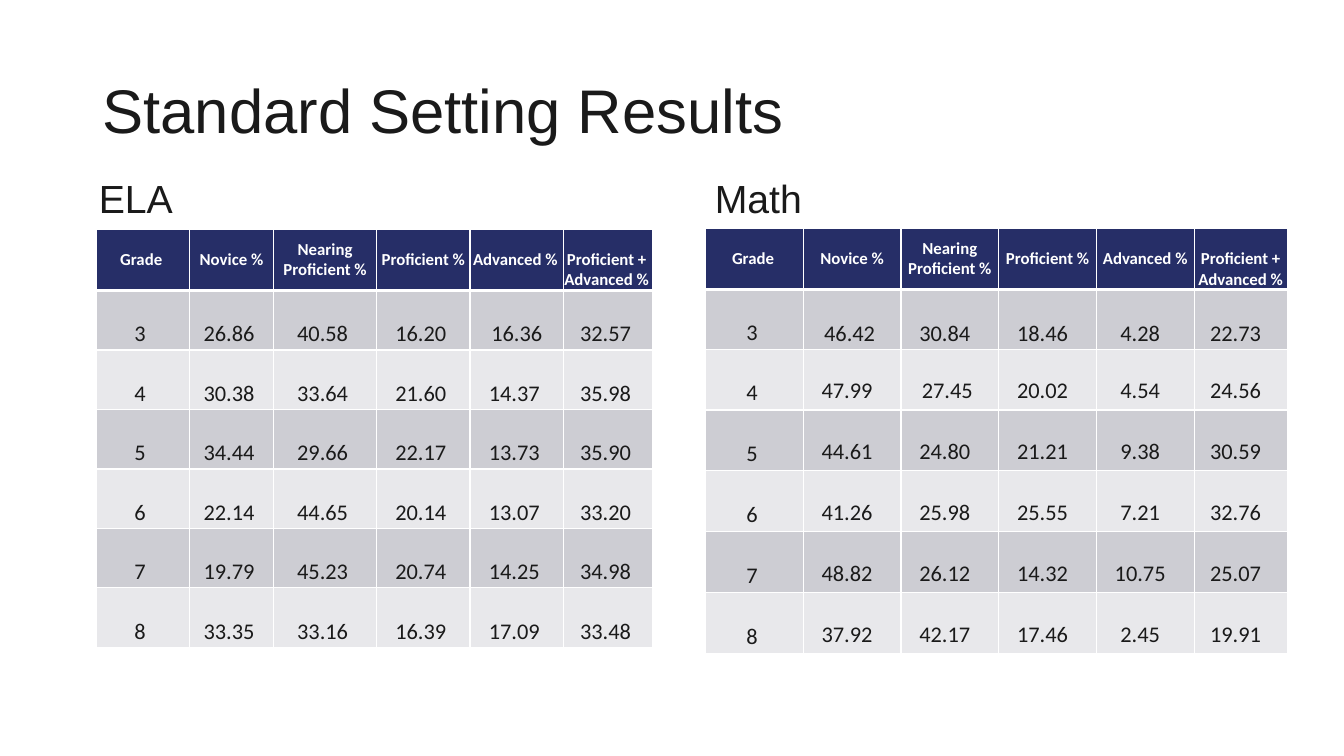
from dataclasses import dataclass, field

from lxml.etree import SubElement
from pptx import Presentation
from pptx.dml.color import RGBColor
from pptx.enum.text import MSO_ANCHOR, MSO_AUTO_SIZE, PP_ALIGN
from pptx.oxml.ns import qn
from pptx.util import Pt

INK = RGBColor(0x1A, 0x1A, 0x1A)
WHITE = RGBColor(0xFF, 0xFF, 0xFF)
NAVY = RGBColor(0x26, 0x2E, 0x67)
BANDS = (RGBColor(0xCD, 0xCD, 0xD3), RGBColor(0xE8, 0xE8, 0xEB))

TITLE_FONT = {"name": "Arial", "size": Pt(44), "bold": False}
SUBJECT_FONT = {"name": "Arial", "size": Pt(28), "bold": False}
HEADER_FONT = {"name": "Calibri", "size": Pt(12), "bold": True}
VALUE_FONT = {"name": "Calibri", "size": Pt(16), "bold": False}

HEADINGS = ("Grade", "Novice %", "Nearing Proficient %", "Proficient %",
            "Advanced %", "Proficient + Advanced %")
GRADE_INSET = 3.6  # right inset that moves centred text slightly left
HEADER_INSET = 2


@dataclass
class SubjectResults:
    subject: str
    subject_left: float
    left: float
    top: float
    columns: list[float]
    rows: list[float]
    results: list[str]
    value_inset: float
    value_bottoms: list[float]
    grade_bottoms: list[float]
    inset_headings: tuple[int, ...]
    special_insets: dict[str, float] = field(default_factory=dict)


ELA = SubjectResults(
    subject="ELA", subject_left=63.4, left=68.6, top=163.6,
    columns=[66.6, 60.4, 73.4, 66.8, 66.8, 63.6],
    rows=[43.9] + [42.5] * 6,
    results=["26.86 40.58 16.20 16.36 32.57",
             "30.38 33.64 21.60 14.37 35.98",
             "34.44 29.66 22.17 13.73 35.90",
             "22.14 44.65 20.14 13.07 33.20",
             "19.79 45.23 20.74 14.25 34.98",
             "33.35 33.16 16.39 17.09 33.48"],
    value_inset=3.6, value_bottoms=[1.7] * 6, grade_bottoms=[1.7] * 6,
    inset_headings=(0, 4, 5), special_insets={"16.36": 0})

MATH = SubjectResults(
    subject="Math", subject_left=503.4, left=504, top=163,
    columns=[69.8] * 5 + [66.5],
    rows=[43.9, 42.5] + [43.5] * 5,
    results=["46.42 30.84 18.46 4.28 22.73",
             "47.99 27.45 20.02 4.54 24.56",
             "44.61 24.80 21.21 9.38 30.59",
             "41.26 25.98 25.55 7.21 32.76",
             "48.82 26.12 14.32 10.75 25.07",
             "37.92 42.17 17.46 2.45 19.91"],
    value_inset=7.2, value_bottoms=[1.4] + [3.6] * 5,
    grade_bottoms=[1.7] + [2.2] * 5,
    inset_headings=(0,), special_insets={"46.42": 3.6, "27.45": 3.6})


def set_all(target, values: dict) -> None:
    for name, value in values.items():
        setattr(target, name, value)


def fill_placeholder(holder, box: tuple, text: str, font: dict, anchor) -> None:
    set_all(holder, dict(zip(("left", "top", "width", "height"), map(Pt, box))))
    set_all(holder.text_frame, {"text": text, "word_wrap": True,
                                "auto_size": MSO_AUTO_SIZE.NONE,
                                "vertical_anchor": anchor})
    paragraph = holder.text_frame.paragraphs[0]
    set_all(paragraph, {"alignment": PP_ALIGN.LEFT, "line_spacing": 0.9,
                        "space_before": Pt(0)})
    properties = paragraph._p.get_or_add_pPr()
    properties.set("marL", "0")
    properties.set("indent", "0")
    SubElement(properties, qn("a:buNone"))
    set_all(paragraph.runs[0].font, font)
    paragraph.runs[0].font.color.rgb = INK


def add_borders(cell, bottom_width: float) -> None:
    properties = cell._tc.get_or_add_tcPr()
    for side, width in (("L", 1), ("R", 1), ("T", 1), ("B", bottom_width)):
        line = SubElement(properties, qn(f"a:ln{side}"), w=str(Pt(width)))
        paint = SubElement(line, qn("a:solidFill"))
        SubElement(paint, qn("a:srgbClr"), val=str(WHITE))


def fill_cell(cell, text: str, font: dict, color: RGBColor, fill: RGBColor,
              anchor, right: float, bottom: float, border: float = 1) -> None:
    add_borders(cell, border)
    cell.fill.solid()
    cell.fill.fore_color.rgb = fill
    set_all(cell, {"text": text, "vertical_anchor": anchor,
                   "margin_left": 0, "margin_top": 0,
                   "margin_right": Pt(right), "margin_bottom": Pt(bottom)})
    paragraph = cell.text_frame.paragraphs[0]
    paragraph.alignment = PP_ALIGN.CENTER
    set_all(paragraph.runs[0].font, font)
    paragraph.runs[0].font.color.rgb = color


def draw_results(slide, exam: SubjectResults) -> None:
    grid = slide.shapes.add_table(
        len(exam.rows), len(exam.columns), Pt(exam.left), Pt(exam.top),
        Pt(sum(exam.columns)), Pt(sum(exam.rows))).table
    grid.horz_banding = False
    for column, width in zip(grid.columns, exam.columns):
        column.width = Pt(width)
    for row, height in zip(grid.rows, exam.rows):
        row.height = Pt(height)

    # Header row: the combined column sits at the bottom of its cell
    for c, heading in enumerate(HEADINGS):
        last = c == len(HEADINGS) - 1
        fill_cell(grid.cell(0, c), heading, HEADER_FONT, WHITE, NAVY,
                  MSO_ANCHOR.BOTTOM if last else MSO_ANCHOR.MIDDLE,
                  HEADER_INSET if c in exam.inset_headings else 0, 0, border=3)

    # One row per grade, starting at grade 3
    for r, line in enumerate(exam.results):
        for c, value in enumerate([str(r + 3), *line.split()]):
            right = exam.special_insets.get(value, exam.value_inset) if c else GRADE_INSET
            bottoms = exam.value_bottoms if c else exam.grade_bottoms
            fill_cell(grid.cell(r + 1, c), value, VALUE_FONT, INK, BANDS[r % 2],
                      MSO_ANCHOR.BOTTOM, right, bottoms[r])


def main() -> None:
    deck = Presentation()
    set_all(deck, {"slide_width": Pt(960), "slide_height": Pt(540)})
    slide = deck.slides.add_slide(deck.slide_layouts[3])

    # Title
    fill_placeholder(slide.shapes.title, (66, 28.8, 828, 104.4),
                     "Standard Setting Results", TITLE_FONT, MSO_ANCHOR.MIDDLE)

    # Subject names, each above its results table
    for index, exam in enumerate((ELA, MATH), start=1):
        fill_placeholder(slide.placeholders[index],
                         (exam.subject_left, 124.6, 400, 38), exam.subject,
                         SUBJECT_FONT, MSO_ANCHOR.TOP)
        draw_results(slide, exam)

    deck.save("out.pptx")


if __name__ == "__main__":
    main()
